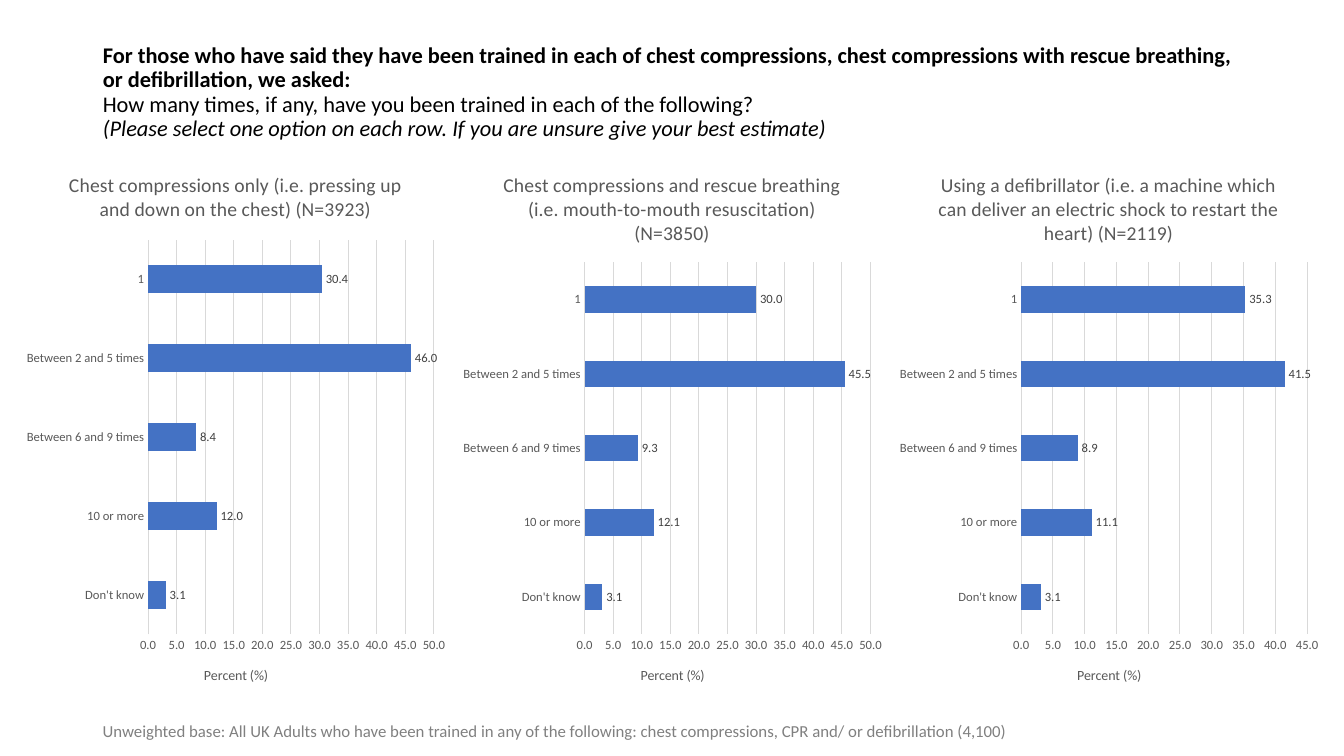
"""Build a slide with three bar charts on how often people were trained in resuscitation."""
from dataclasses import dataclass

from lxml import etree
from pptx import Presentation
from pptx.chart.data import CategoryChartData
from pptx.dml.color import RGBColor
from pptx.enum.chart import XL_CHART_TYPE, XL_LABEL_POSITION, XL_TICK_MARK
from pptx.enum.text import MSO_ANCHOR, MSO_AUTO_SIZE, PP_ALIGN
from pptx.util import Inches, Pt

BAR_CLUSTERED = XL_CHART_TYPE.BAR_CLUSTERED
OUTSIDE_END = XL_LABEL_POSITION.OUTSIDE_END
NO_TICK = XL_TICK_MARK.NONE
MIDDLE = MSO_ANCHOR.MIDDLE
NO_FIT = MSO_AUTO_SIZE.NONE
LEFT = PP_ALIGN.LEFT

COLOURS = {
    "heading": "000000",
    "note": "808080",
    "axis": "595959",
    "label": "404040",
    "grid": "D9D9D9",
    "bar": "4472C4",
}
FONT = "Calibri"
SLIDE_WIDTH, SLIDE_HEIGHT = Inches(13.33), Inches(7.5)
MARGIN = 0.92 / 13.33
CHART_LEFT, CHART_WIDTH = 0.17 / 13.33, 4.33 / 13.33
CHART_TOP, CHART_HEIGHT = 1.5 / 7.5, 5.51 / 7.5
PLOT_LEFT, PLOT_WIDTH, PLOT_BOTTOM = 0.3, 0.655, 0.87
CHART_NS = "http://schemas.openxmlformats.org/drawingml/2006/chart"

HEADING = (
    "For those who have said they have been trained in each of chest compressions, "
    "chest compressions with rescue breathing, or defibrillation, we asked:",
    "How many times, if any, have you been trained in each of the following?",
    "(Please select one option on each row. If you are unsure give your best estimate)",
)
NOTE = (
    "Unweighted base: All UK Adults who have been trained in any of the following: "
    "chest compressions, CPR and/ or defibrillation (4,100)"
)
ANSWERS = ("Don't know", "10 or more", "Between 6 and 9 times", "Between 2 and 5 times", "1")


@dataclass(frozen=True)
class Training:
    title: str
    percents: tuple[float, ...]
    axis_maximum: int
    plot_top: float


TRAININGS = (
    Training("Chest compressions only (i.e. pressing up and down on the chest) (N=3923)",
             (3.1, 12.0, 8.4, 46.0, 30.4), 50, 0.16),
    Training("Chest compressions and rescue breathing (i.e. mouth-to-mouth resuscitation) (N=3850)",
             (3.1, 12.1, 9.3, 45.5, 30.0), 50, 0.2),
    Training("Using a defibrillator (i.e. a machine which can deliver an electric shock "
             "to restart the heart) (N=2119)",
             (3.1, 11.1, 8.9, 41.5, 35.3), 45, 0.2),
)


def colour(name: str) -> RGBColor:
    return RGBColor.from_string(COLOURS[name])


def place(left: float, top: float, width: float, height: float) -> tuple[int, int, int, int]:
    return (round(SLIDE_WIDTH * left), round(SLIDE_HEIGHT * top),
            round(SLIDE_WIDTH * width), round(SLIDE_HEIGHT * height))


def style(font, size: float, colour_name: str, bold: bool = False, italic: bool = False) -> None:
    font.name, font.size = FONT, Pt(size)
    font.bold, font.italic = bold, italic
    font.color.rgb = colour(colour_name)


def fill_title(text_frame, text: str, size: float) -> None:
    text_frame.text = text
    style(text_frame.paragraphs[0].runs[0].font, size, "axis")


def set_plot_layout(chart, top: float) -> None:
    plot_area = chart._chartSpace.chart.plotArea
    for old_layout in plot_area.findall(f"{{{CHART_NS}}}layout"):
        plot_area.remove(old_layout)
    layout = etree.Element(f"{{{CHART_NS}}}layout")
    manual = etree.SubElement(layout, f"{{{CHART_NS}}}manualLayout")
    settings = {"layoutTarget": "inner", "xMode": "edge", "yMode": "edge",
                "x": PLOT_LEFT, "y": top, "w": PLOT_WIDTH, "h": round(PLOT_BOTTOM - top, 2)}
    for tag, value in settings.items():
        etree.SubElement(manual, f"{{{CHART_NS}}}{tag}", val=str(value))
    plot_area.insert(0, layout)


def style_axes(chart, maximum: int) -> None:
    answer_axis, percent_axis = chart.category_axis, chart.value_axis
    for axis in (answer_axis, percent_axis):
        axis.major_tick_mark = axis.minor_tick_mark = NO_TICK
        style(axis.tick_labels.font, 9, "axis")
    answer_axis.has_major_gridlines = False
    percent_axis.has_major_gridlines = True
    for line in (answer_axis.format.line, percent_axis.major_gridlines.format.line):
        line.color.rgb = colour("grid")
        line.width = Pt(0.75)
    percent_axis.format.line.fill.background()
    percent_axis.minimum_scale, percent_axis.maximum_scale = 0, maximum
    percent_axis.major_unit = 5
    percent_axis.tick_labels.number_format = "0.0"
    percent_axis.tick_labels.number_format_is_linked = False
    fill_title(percent_axis.axis_title.text_frame, "Percent (%)", 10)


def add_training_chart(page, training: Training, column: int) -> None:
    chart_data = CategoryChartData(number_format="0.0")
    chart_data.categories = ANSWERS
    chart_data.add_series("Series 1", training.percents)
    area = place(CHART_LEFT + column * CHART_WIDTH, CHART_TOP, CHART_WIDTH, CHART_HEIGHT)
    chart = page.shapes.add_chart(BAR_CLUSTERED, *area, chart_data).chart
    style(chart.font, 10, "heading")
    chart.has_legend = False
    fill_title(chart.chart_title.text_frame, training.title, 14)
    chart.chart_title.include_in_layout = False
    style_axes(chart, training.axis_maximum)

    plot = chart.plots[0]
    plot.gap_width = 182
    plot.vary_by_categories = False
    bars = plot.series[0]
    bars.format.fill.solid()
    bars.format.fill.fore_color.rgb = colour("bar")
    labels = bars.data_labels
    labels.show_value = True
    labels.position = OUTSIDE_END
    labels.number_format, labels.number_format_is_linked = "0.0", False
    style(labels.font, 9, "label")
    set_plot_layout(chart, training.plot_top)


def format_heading(title) -> None:
    title.left, title.top, title.width, title.height = place(
        MARGIN, 0.4 / 7.5, 11.5 / 13.33, 1.04 / 7.5)
    frame = title.text_frame
    frame.text = "\v".join(HEADING)
    frame.word_wrap, frame.auto_size, frame.vertical_anchor = True, NO_FIT, MIDDLE
    para = frame.paragraphs[0]
    para.alignment, para.line_spacing = LEFT, 0.9
    for index, span in enumerate(para.runs):
        style(span.font, 16, "heading", bold=index == 0, italic=index == 2)


def add_note(page) -> None:
    box = page.shapes.add_textbox(*place(MARGIN, 7.1 / 7.5, 12.03 / 13.33, 0.3 / 7.5))
    box.text_frame.word_wrap = True
    box.text_frame.text = NOTE
    style(box.text_frame.paragraphs[0].runs[0].font, 12, "note")


def main() -> None:
    deck = Presentation()
    deck.slide_width, deck.slide_height = SLIDE_WIDTH, SLIDE_HEIGHT
    page = deck.slides.add_slide(deck.slide_layouts.get_by_name("Title Only"))
    format_heading(page.shapes.title)
    add_note(page)
    for column, training in enumerate(TRAININGS):
        add_training_chart(page, training, column)
    deck.save("out.pptx")


if __name__ == "__main__":
    main()
